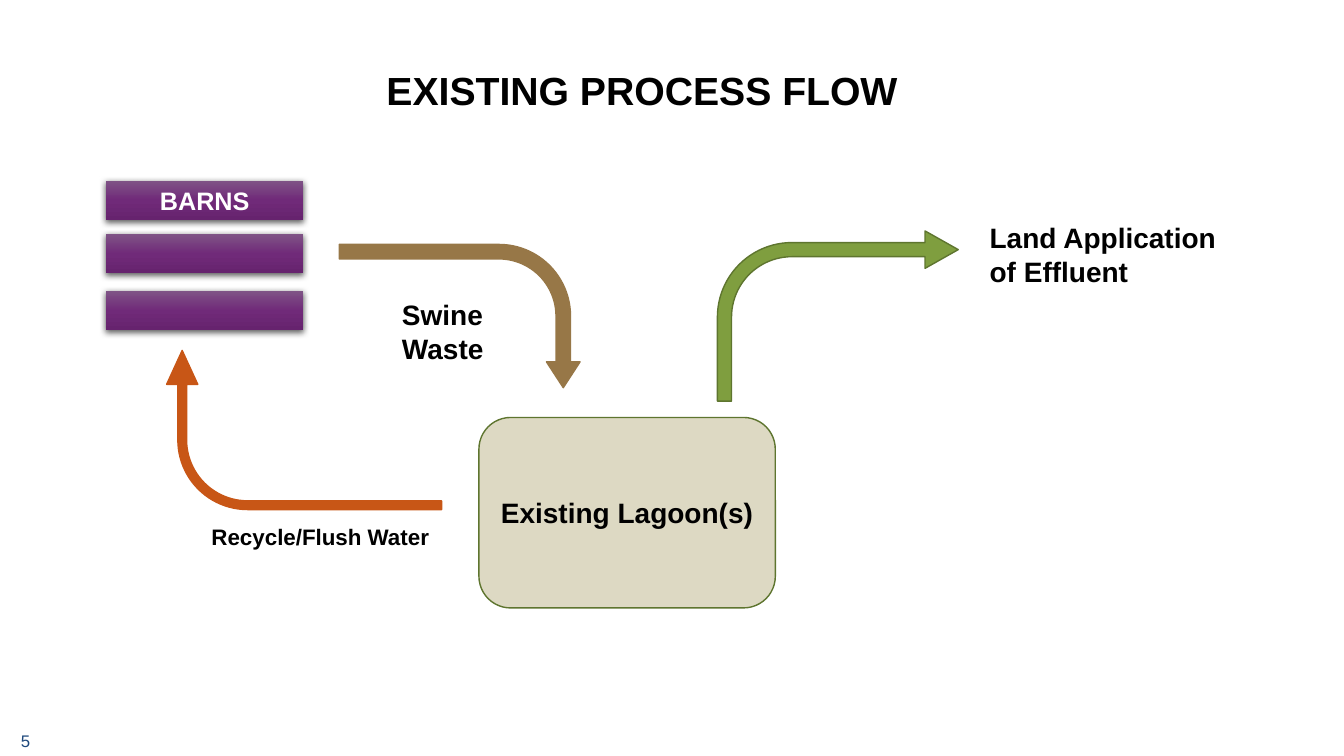
from dataclasses import dataclass

from lxml.etree import SubElement
from pptx import Presentation
from pptx.dml.color import RGBColor
from pptx.enum.shapes import MSO_SHAPE
from pptx.enum.text import MSO_ANCHOR, MSO_AUTO_SIZE, PP_ALIGN
from pptx.oxml.ns import qn
from pptx.util import Cm, Pt


@dataclass(frozen=True)
class Theme:
    font: str = "Arial"
    text: str = "000000"
    barn_text: str = "FFFFFF"
    number: str = "1F497D"
    barn_stops: tuple = ("7F5486", "702A79", "66236E")
    barn_shadow: str = "000000"
    waste: str = "977747"
    lagoon: str = "DDD9C3"
    effluent: str = "7F9E3F"
    outline: str = "5E752F"
    recycle: str = "C85616"
    title_size: int = 28
    label_size: int = 20
    barn_size: int = 18
    small_size: int = 16
    number_size: int = 12


class FlowSlide:
    def __init__(self, presentation, theme):
        self.theme = theme
        self.slide = presentation.slides.add_slide(presentation.slide_layouts[5])

    def add_text(self, shape, text, size, color=None, align=PP_ALIGN.LEFT,
                 anchor=MSO_ANCHOR.TOP, bold=True):
        frame = shape.text_frame
        frame.word_wrap = True
        frame.auto_size = MSO_AUTO_SIZE.NONE
        frame.vertical_anchor = anchor
        paragraph = frame.paragraphs[0]
        paragraph.alignment = align
        run = paragraph.add_run()
        run.text = text
        run.font.name = self.theme.font
        run.font.size = Pt(size)
        run.font.bold = bold
        run.font.color.rgb = RGBColor.from_string(color or self.theme.text)

    def title(self, text, left, top, width, height):
        heading = self.slide.shapes.title
        heading.left, heading.top = Cm(left), Cm(top)
        heading.width, heading.height = Cm(width), Cm(height)
        self.add_text(heading, text, self.theme.title_size, align=PP_ALIGN.CENTER)

    def label(self, text, box, size, **style):
        caption = self.slide.shapes.add_textbox(*map(Cm, box))
        self.add_text(caption, text, size, **style)

    def block(self, preset, box, fill, line):
        shape = self.slide.shapes.add_shape(preset, *map(Cm, box))
        shape.shadow.inherit = False
        shape.fill.solid()
        shape.fill.fore_color.rgb = RGBColor.from_string(fill)
        shape.line.color.rgb = RGBColor.from_string(line)
        shape.line.width = Pt(1)
        return shape

    def bent_arrow(self, box, fill, line, adjustments, rotation=0):
        arrow = self.block(MSO_SHAPE.BENT_ARROW, box, fill, line)
        arrow.rotation = rotation
        for index, value in enumerate(adjustments):
            arrow.adjustments[index] = value

    def barns(self, text, left, tops, width, height):
        group = self.slide.shapes.add_group_shape()
        for index, top in enumerate(tops):
            barn = group.shapes.add_shape(
                MSO_SHAPE.RECTANGLE, Cm(left), Cm(top), Cm(width), Cm(height))
            barn.line.fill.background()
            self.shade(barn)
            if index == 0:
                self.add_text(barn, text, self.theme.barn_size, self.theme.barn_text,
                              PP_ALIGN.CENTER, MSO_ANCHOR.MIDDLE)

    def shade(self, barn):
        # Three-stop gradient running downwards
        barn.fill.gradient()
        barn.fill.gradient_angle = 270
        properties = barn.element.spPr
        stops = properties.find(qn("a:gradFill")).find(qn("a:gsLst"))
        for stop in list(stops):
            stops.remove(stop)
        for position, color in zip((0, 50000, 100000), self.theme.barn_stops):
            stop = SubElement(stops, qn("a:gs"), pos=str(position))
            SubElement(stop, qn("a:srgbClr"), val=color)
        # Soft shadow below
        barn.shadow.inherit = False
        shadow = SubElement(
            properties.find(qn("a:effectLst")), qn("a:outerShdw"),
            blurRad=str(Pt(4.5)), dist=str(Pt(1.5)), dir="5400000", rotWithShape="0")
        shade = SubElement(shadow, qn("a:srgbClr"), val=self.theme.barn_shadow)
        SubElement(shade, qn("a:alpha"), val="63000")


def main():
    presentation = Presentation()
    presentation.slide_width, presentation.slide_height = Cm(33.87), Cm(19.05)
    theme = Theme()
    flow = FlowSlide(presentation, theme)

    # Title and slide number
    flow.title("EXISTING PROCESS FLOW", 9.17, 1.55, 14.02, 1.45)
    flow.label("5", (0.28, 18.47, 7.62, 0.38), theme.number_size,
               color=theme.number, anchor=MSO_ANCHOR.MIDDLE, bold=False)

    # Barns
    flow.barns("BARNS", 2.67, (4.55, 5.9, 7.33), 4.98, 0.99)

    # Waste from barns to lagoon
    flow.bent_arrow((9.78, 4.93, 3.61, 6.07), theme.waste, theme.waste,
                    (0.101, 0.118, 0.181, 0.5), rotation=90)
    flow.label("Swine Waste", (9.88, 7.37, 3.38, 1.96), theme.label_size)

    # Lagoon
    lagoon = flow.block(MSO_SHAPE.ROUNDED_RECTANGLE, (12.07, 10.52, 7.47, 4.8),
                        theme.lagoon, theme.outline)
    flow.add_text(lagoon, "Existing Lagoon(s)", theme.label_size,
                  align=PP_ALIGN.CENTER, anchor=MSO_ANCHOR.MIDDLE)

    # Effluent from lagoon to land
    flow.bent_arrow((18.08, 5.82, 6.07, 4.29), theme.effluent, theme.outline,
                    (0.083, 0.11, 0.195, 0.438))
    flow.label("Land Application of Effluent", (24.69, 5.44, 6.5, 1.96),
               theme.label_size)

    # Water recycled to the barns
    flow.bent_arrow((5.66, 7.37, 4.01, 6.93), theme.recycle, theme.recycle,
                    (0.055, 0.098, 0.213, 0.438), rotation=270)
    flow.label("Recycle/Flush Water", (5.08, 13.06, 6.07, 0.94), theme.small_size)

    presentation.save("out.pptx")


if __name__ == "__main__":
    main()
